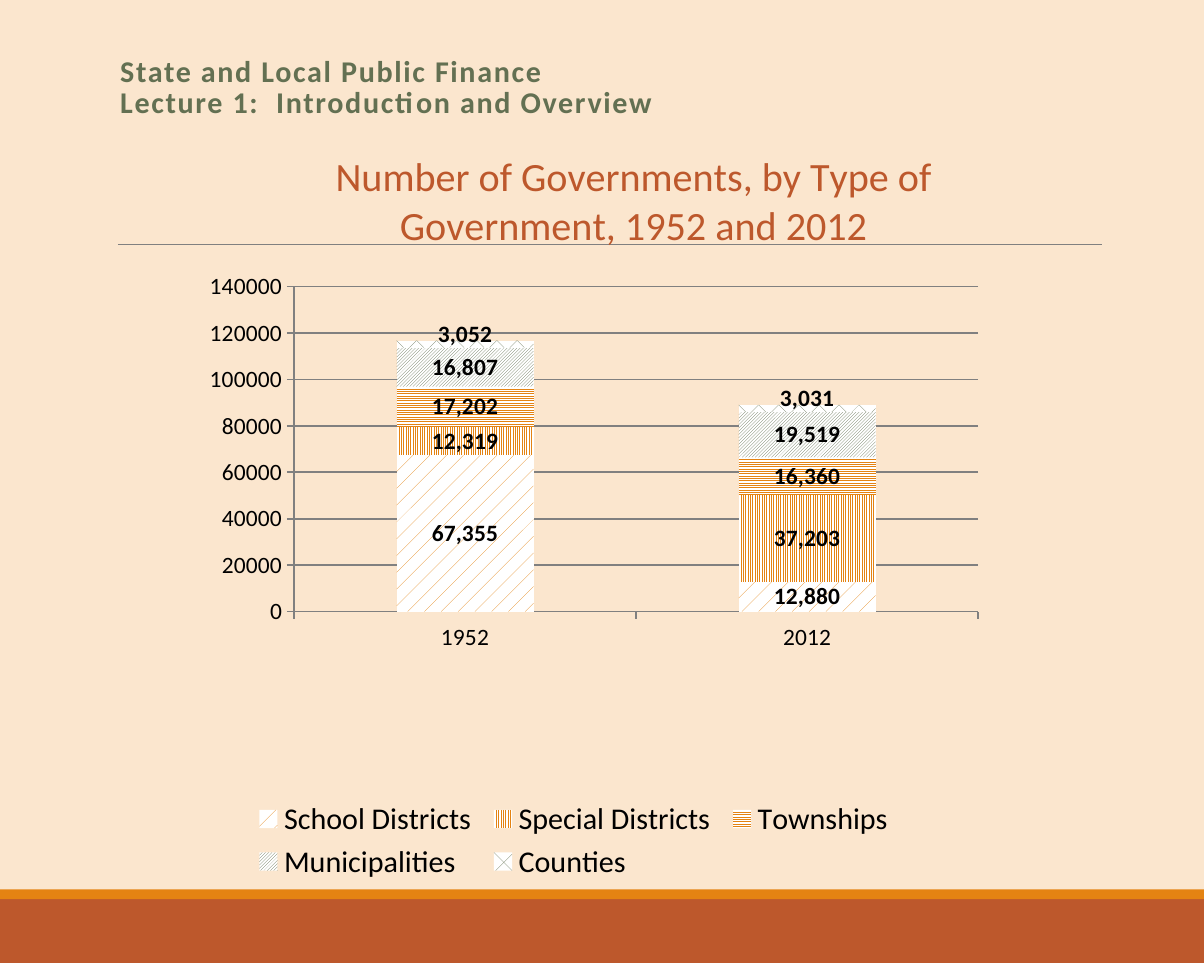
from dataclasses import dataclass

from lxml.etree import SubElement
from pptx import Presentation
from pptx.chart.data import CategoryChartData as Data
from pptx.dml.color import RGBColor as Rgb
from pptx.enum.chart import XL_CHART_TYPE as Kind, XL_LEGEND_POSITION as Side
from pptx.enum.chart import XL_TICK_MARK as Tick
from pptx.enum.dml import MSO_PATTERN as Pat
from pptx.enum.shapes import MSO_CONNECTOR as Conn, MSO_SHAPE as Shape
from pptx.enum.text import MSO_ANCHOR as Anchor
from pptx.oxml import parse_xml as to_xml
from pptx.oxml.ns import nsdecls, qn
from pptx.util import Pt


@dataclass(frozen=True)
class Theme:
    """Colours, font and type sizes of the slide."""
    face: str = "Calibri"
    back: str = "FBE6CE"
    rust: str = "BD582C"
    gold: str = "E48312"
    moss: str = "637052"
    gray: str = "808080"
    ink: str = "000000"
    white: str = "FFFFFF"
    head: int = 18
    title: int = 24
    key: int = 18
    label: int = 14
    base: int = 10


THEME = Theme()
YEARS = ("1952", "2012")
SERIES = (
    ("School Districts", (67355, 12880), Pat.PERCENT_5, THEME.gold),
    ("Special Districts", (12319, 37203), Pat.LIGHT_VERTICAL, THEME.gold),
    ("Townships", (17202, 16360), Pat.LIGHT_HORIZONTAL, THEME.gold),
    ("Municipalities", (16807, 19519), Pat.LIGHT_UPWARD_DIAGONAL, THEME.moss),
    ("Counties", (3052, 3031), Pat.DIAGONAL_BRICK, THEME.moss),
)
LIFT = -0.013


def color(code):
    """Turn a hex code into a colour."""
    return Rgb.from_string(code)


def style(font, size, ink=THEME.ink, bold=False):
    """Set face, size, colour and weight of a font."""
    font.name, font.size, font.bold = THEME.face, Pt(size), bold
    font.color.rgb = color(ink)


def write(frame, text, size, ink=THEME.ink, bold=False, space=None, lead=None):
    """Put formatted text into a text frame."""
    para = frame.paragraphs[0]
    para.text = text
    if lead:
        para.line_spacing = lead
    for run in para.runs:
        style(run.font, size, ink, bold)
        if space:
            run._r.get_or_add_rPr().set("spc", str(space))


def rule(line, width):
    """Give a line the gray colour and a width."""
    line.color.rgb, line.width = color(THEME.gray), Pt(width)


def place(node, index, **spots):
    """Insert a manual layout with the given settings into a chart part."""
    for old in node.findall(qn("c:layout")):
        node.remove(old)
    layout = to_xml(f"<c:layout {nsdecls('c')}><c:manualLayout/></c:layout>")
    for name, value in spots.items():
        SubElement(layout[0], qn(f"c:{name}")).set("val", str(value))
    node.insert(index, layout)


def band(slide, box, fill):
    """Draw a plain filled bar in the box."""
    bar = slide.shapes.add_shape(Shape.RECTANGLE, *map(Pt, box))
    bar.shadow.inherit = False
    bar.fill.solid()
    bar.fill.fore_color.rgb = color(fill)
    bar.line.fill.background()


def footer(slide, box):
    """Draw the gold strip and the rust bar below it."""
    left, top, width, height = box
    strip = 5.8
    band(slide, (left, top + strip, width, height - strip), THEME.rust)
    band(slide, (left, top, width, strip), THEME.gold)


def divide(slide, box):
    """Draw the thin line along the top of the box."""
    left, top, width, _ = box
    ends = map(Pt, (left, top, left + width, top))
    line = slide.shapes.add_connector(Conn.STRAIGHT, *ends)
    rule(line.line, 0.5)
    SubElement(line._element.spPr, qn("a:effectLst"))


def header(slide, box):
    """Write the lecture heading at the foot of the box."""
    frame = slide.shapes.add_textbox(*map(Pt, box)).text_frame
    frame.word_wrap, frame.vertical_anchor = True, Anchor.BOTTOM
    text = "State and Local Public Finance\vLecture 1:  Introduction and Overview"
    write(frame, text, THEME.head, ink=THEME.moss, bold=True, space=100, lead=0.85)


def paint(series, pattern, ink):
    """Fill a series with its pattern and label its values."""
    fill = series.format.fill
    fill.patterned()
    fill.pattern = pattern
    fill.fore_color.rgb, fill.back_color.rgb = color(ink), color(THEME.white)
    labels = series.data_labels
    labels.show_value = True
    labels.number_format, labels.number_format_is_linked = "#,##0", False
    style(labels.font, THEME.label, bold=True)


def lift(series):
    """Raise the labels of the thin top series."""
    for index in range(len(YEARS)):
        style(series.points[index].data_label.font, THEME.label, bold=True)
    for node in series._element.iter(qn("c:dLbl")):
        place(node, 1, x=0, y=LIFT)


def graph(slide, box):
    """Build the stacked column chart in the box."""
    data = Data(number_format="#,##0")
    data.categories = YEARS
    for name, values, _, _ in SERIES:
        data.add_series(name, values)
    kind = Kind.COLUMN_STACKED
    chart = slide.shapes.add_chart(kind, *map(Pt, box), data).chart
    style(chart.font, THEME.base)
    edge = {"xMode": "edge", "yMode": "edge"}

    chart.has_title = True
    title = "Number of Governments, by Type of Government, 1952 and 2012"
    write(chart.chart_title.text_frame, title, THEME.title, ink=THEME.rust)
    place(chart.chart_title._element, 1, **edge, x=0.2, y=0.02)

    plot = chart.plots[0]
    plot.gap_width, plot.overlap, plot.vary_by_categories = 150, 100, False
    for series, (_, _, pattern, ink) in zip(plot.series, SERIES):
        paint(series, pattern, ink)
    lift(plot.series[-1])
    area = chart._chartSpace.chart.plotArea
    place(area, 0, layoutTarget="inner", **edge, x=0.158, y=0.211, w=0.837, h=0.428)

    for axis in (chart.category_axis, chart.value_axis):
        axis.major_tick_mark, axis.minor_tick_mark = Tick.OUTSIDE, Tick.NONE
        style(axis.tick_labels.font, THEME.label)
        rule(axis.format.line, 1)
    scale = chart.value_axis
    scale.minimum_scale, scale.maximum_scale, scale.major_unit = 0, 140000, 20000
    scale.has_major_gridlines = True
    rule(scale.major_gridlines.format.line, 1)
    marks = scale.tick_labels
    marks.number_format, marks.number_format_is_linked = "0", False

    chart.has_legend = True
    legend = chart.legend
    legend.position, legend.include_in_layout = Side.BOTTOM, False
    style(legend.font, THEME.key)
    place(legend._element, 1, **edge, x=0.1, y=0.88, w=0.8, h=0.12)


def main():
    """Build and save the slide."""
    deck = Presentation()
    deck.slide_width, deck.slide_height = Pt(720), Pt(576)
    slide = deck.slides.add_slide(deck.slide_layouts[6])
    slide.background.fill.solid()
    slide.background.fill.fore_color.rgb = color(THEME.back)
    footer(slide, (0, 532, 720, 44))
    divide(slide, (70.5, 146, 588.5, 0))
    header(slide, (64.8, 23.8, 594, 51.1))
    graph(slide, (98.6, 75.6, 488.9, 454.3))
    deck.save("out.pptx")


if __name__ == "__main__":
    main()
